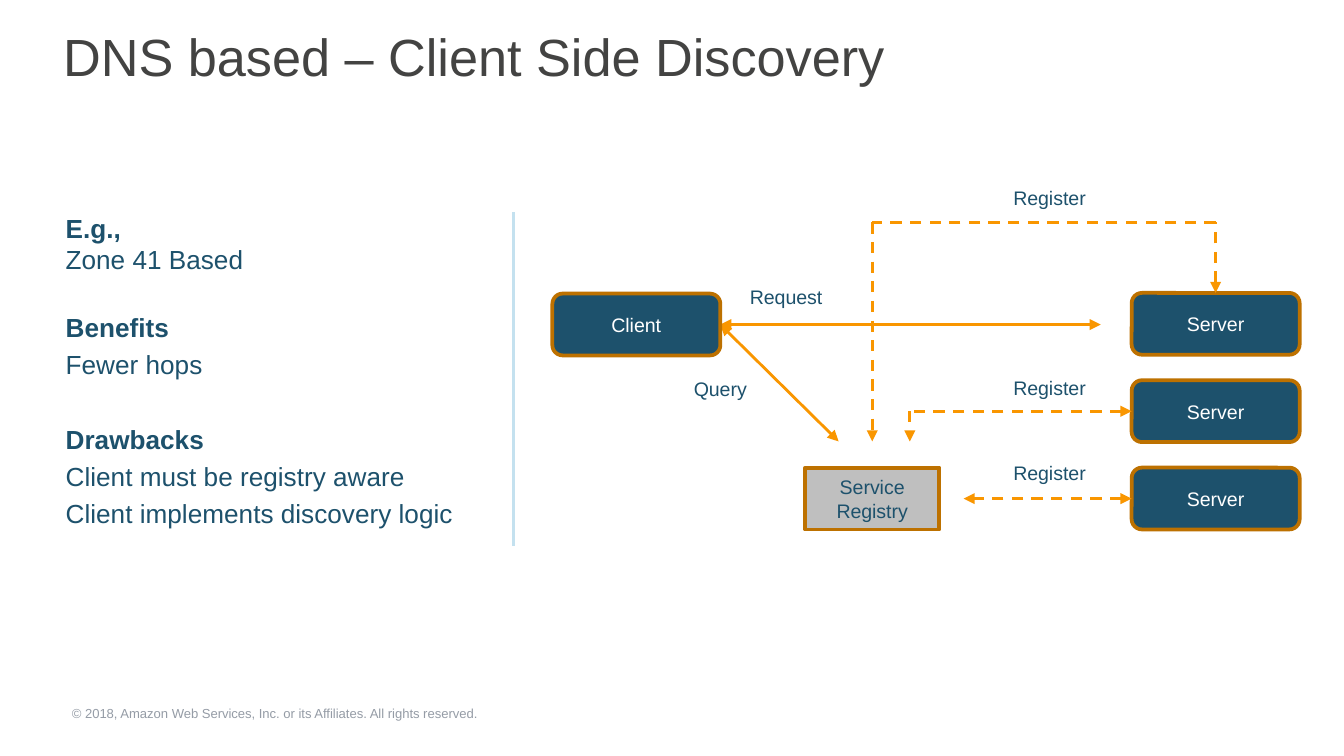
from pptx import Presentation
from pptx.dml.color import RGBColor
from pptx.enum.dml import MSO_LINE
from pptx.enum.shapes import MSO_CONNECTOR, MSO_SHAPE
from pptx.enum.text import MSO_ANCHOR, PP_ALIGN
from pptx.oxml.ns import qn
from pptx.util import Inches, Pt
from lxml import etree

STRAIGHT = MSO_CONNECTOR.STRAIGHT
RECT, ROUND = MSO_SHAPE.RECTANGLE, MSO_SHAPE.ROUNDED_RECTANGLE
DASH = MSO_LINE.DASH
MIDDLE, TOP = MSO_ANCHOR.MIDDLE, MSO_ANCHOR.TOP
CENTER, LEFT = PP_ALIGN.CENTER, PP_ALIGN.LEFT

NAVY = RGBColor(0x1D, 0x51, 0x6C)
ORANGE = RGBColor(0xF9, 0x96, 0x00)
BROWN = RGBColor(0xBD, 0x71, 0x00)
SILVER = RGBColor(0xBF, 0xBF, 0xBF)
PALE_BLUE = RGBColor(0xC4, 0xE1, 0xEF)
CHARCOAL = RGBColor(0x43, 0x43, 0x42)
GRAY = RGBColor(0x95, 0x9C, 0xA6)
WHITE = RGBColor(0xFF, 0xFF, 0xFF)

# A 16:9 slide
prs = Presentation()
prs.slide_width = Inches(10)
prs.slide_height = prs.slide_width * 9 // 16
s = prs.slides.add_slide(prs.slide_layouts[5])

# Grid: 100 square cells across the slide; all positions are in cells
CELL = prs.slide_width / 100
BOX_W, BOX_H = 12.5, 4.6
LABEL_W, LABEL_H = 7.6, 2.8
CLIENT_X, CLIENT_Y = 41.1, 21.85
SERVER_X = 84.2
SERVER_ROWS = [21.8 + 6.5 * i for i in range(3)]
SERVER_MID = SERVER_X + BOX_W / 2
REGISTRY_X, REGISTRY_W = 59.9, 10
REGISTRY_MID = REGISTRY_X + REGISTRY_W / 2
REGISTRY_TIP = 32.85
LOOP_Y = 16.55


def write(sp, lines, size, color, align=LEFT, anchor=TOP, margins=(0.1, 0.05)):
    """Fill a shape with lines of (text, bold, space before)."""
    tf = sp.text_frame
    x, y = (Inches(m) for m in margins)
    frame = dict(word_wrap=True, vertical_anchor=anchor, margin_left=x,
                 margin_right=x, margin_top=y, margin_bottom=y)
    for name, value in frame.items():
        setattr(tf, name, value)
    for i, (text, bold, before) in enumerate(lines):
        p = tf.paragraphs[0] if i == 0 else tf.add_paragraph()
        p.alignment, p.space_before = align, Pt(before)
        r = p.add_run()
        r.text = text
        for name, value in dict(name="Arial", size=Pt(size), bold=bold).items():
            setattr(r.font, name, value)
        r.font.color.rgb = color


def draw_line(points, color, width, dash=None, ends=()):
    """Draw a straight line, with arrowheads at the named ends."""
    c = s.shapes.add_connector(STRAIGHT, *(round(v * CELL) for v in points))
    c.line.color.rgb, c.line.width = color, Pt(width)
    if dash:
        c.line.dash_style = dash
    sp_pr = c._element.spPr
    for end in ends:
        etree.SubElement(sp_pr.find(qn("a:ln")), qn(f"a:{end}"), type="triangle")
    etree.SubElement(sp_pr, qn("a:effectLst"))


# Title
title = s.shapes.title
title.left, title.top, title.width, title.height = (
    round(v * CELL) for v in (3.7, 1.3, 89.7, 6))
write(title, [("DNS based – Client Side Discovery", False, 0)], 28, CHARCOAL)

# Summary on the left, and the copyright line
summary = [
    ("E.g.,", True, 0),
    ("Zone 41 Based", False, 0),
    ("Benefits", True, 19.5),
    ("Fewer hops", False, 3.2),
    ("Drawbacks", True, 23),
    ("Client must be registry aware", False, 3.2),
    ("Client implements discovery logic", False, 3.2),
]
sp = s.shapes.add_textbox(*(round(v * CELL) for v in (3.9, 15.3, 32.1, 25.8)))
write(sp, summary, 14, NAVY)

sp = s.shapes.add_textbox(*(round(v * CELL) for v in (5.35, 52.5, 33.1, 1.2)))
write(sp, [("© 2018, Amazon Web Services, Inc. or its Affiliates. All rights reserved.",
            False, 0)], 7, GRAY, margins=(0, 0))

# Divider
draw_line((38.2, 15.8, 38.2, 40.6), PALE_BLUE, 1.75)

# Client arrows: query and request
BOTH, HEAD, TAIL = ("headEnd", "tailEnd"), ("headEnd",), ("tailEnd",)
port_x, port_y = CLIENT_X + BOX_W, CLIENT_Y + BOX_H / 2
for end in ((62.4, REGISTRY_TIP), (81.9, port_y)):
    draw_line((port_x, port_y, *end), ORANGE, 1.5, ends=BOTH)

# Boxes
boxes = [(CLIENT_X, CLIENT_Y, BOX_W, ROUND, "Client", NAVY, WHITE)]
boxes += [(SERVER_X, y, BOX_W, ROUND, "Server", NAVY, WHITE) for y in SERVER_ROWS]
boxes.append((REGISTRY_X, SERVER_ROWS[2], REGISTRY_W, RECT, "Service Registry",
              SILVER, NAVY))
for x, y, w, kind, text, fill, color in boxes:
    sp = s.shapes.add_shape(kind, *(round(v * CELL) for v in (x, y, w, BOX_H)))
    sp.shadow.inherit = False
    sp.fill.solid()
    sp.fill.fore_color.rgb = fill
    sp.line.color.rgb, sp.line.width = BROWN, Pt(2)
    write(sp, [(text, False, 0)], 10.5, color, CENTER, MIDDLE)

# Registration paths from the servers to the registry
mid_y, low_y = (y + BOX_H / 2 for y in SERVER_ROWS[1:])
for points, ends in (
    ((SERVER_MID, SERVER_ROWS[0], SERVER_MID, LOOP_Y), HEAD),
    ((SERVER_MID, LOOP_Y, REGISTRY_MID, LOOP_Y), ()),
    ((REGISTRY_MID, LOOP_Y, REGISTRY_MID, REGISTRY_TIP), TAIL),
    ((SERVER_X, mid_y, 67.7, mid_y), HEAD),
    ((67.7, mid_y, 67.7, REGISTRY_TIP), TAIL),
    ((SERVER_X, low_y, 71.7, low_y), BOTH),
):
    draw_line(points, ORANGE, 1.5, DASH, ends)

# Arrow labels
for text, x, y in (("Request", 54.7, 20.7), ("Query", 49.8, 27.55),
                   ("Register", 74.3, 13.3), ("Register", 74.3, 27.45),
                   ("Register", 74.3, 33.8)):
    sp = s.shapes.add_textbox(*(round(v * CELL) for v in (x, y, LABEL_W, LABEL_H)))
    write(sp, [(text, False, 0)], 10.5, NAVY, CENTER, MIDDLE, (0, 0.05))

prs.save("out.pptx")
